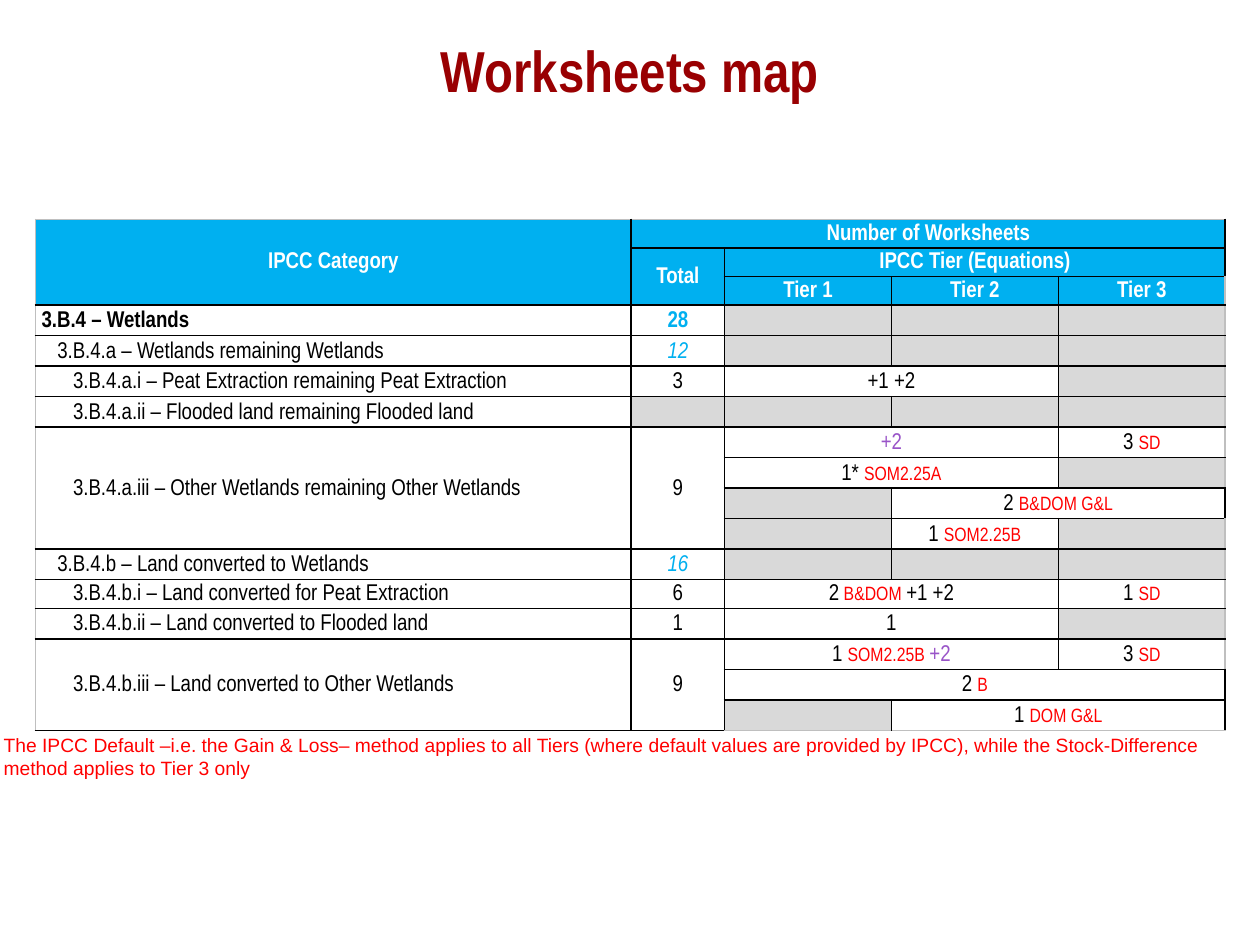
from dataclasses import dataclass

from lxml import etree
from pptx import Presentation
from pptx.dml.color import RGBColor
from pptx.enum.text import MSO_ANCHOR, PP_ALIGN
from pptx.oxml.ns import qn
from pptx.util import Inches, Pt

CENTER, LEFT = PP_ALIGN.CENTER, PP_ALIGN.LEFT
MIDDLE, TOP = MSO_ANCHOR.MIDDLE, MSO_ANCHOR.TOP

SLIDE_W, SLIDE_H = Inches(10), Inches(7.5)
BLUE, GREY, WHITE, BLACK = "00B0F0", "D9D9D9", "FFFFFF", "000000"
RED, PURPLE, MAROON, FRAME = "FF0000", "9954C8", "990002", "BFBFBF"
NARROW = "Arial Narrow"

COLUMN_WIDTHS = (4.73, 0.74, 1.325, 1.325, 1.325)
HEADER_ROWS, ROW_COUNT, COMPACT_ROW = 3, 17, 12
COMPACT_HEIGHT, BODY_HEIGHT = 0.225, 0.24
LINE_SPACING = 1.07
INDENT_START, INDENT_STEP = 0.05, 0.125


@dataclass(frozen=True)
class Piece:
    text: str
    color: str = BLACK
    size: float = 13
    bold: bool = False
    italic: bool = False
    font: str = NARROW


@dataclass(frozen=True)
class Entry:
    row: int
    col: int
    pieces: tuple[Piece, ...]
    rows: int = 1
    cols: int = 1
    level: int = 0


def heading(row: int, col: int, text: str, rows: int = 1, cols: int = 1) -> Entry:
    return Entry(row, col, (Piece(text, WHITE, bold=True),), rows, cols)


def category(row: int, level: int, text: str, rows: int = 1) -> Entry:
    return Entry(row, 0, (Piece(text, bold=level == 0),), rows, level=level)


def total(row: int, text: str, rows: int = 1) -> Entry:
    return Entry(row, 1, (Piece(text),), rows)


def subtotal(row: int, text: str, bold: bool = False) -> Entry:
    return Entry(row, 1, (Piece(text, BLUE, bold=bold, italic=not bold),))


def sheets(row: int, col: int, cols: int, *pieces: Piece) -> Entry:
    return Entry(row, col, pieces, cols=cols)


def method(text: str) -> Piece:
    return Piece(text, RED, 11)


PLUS_TWO = Piece("+2", PURPLE)

ENTRIES = (
    heading(0, 0, "IPCC Category", rows=3),
    heading(0, 1, "Number of Worksheets", cols=4),
    heading(1, 1, "Total", rows=2),
    heading(1, 2, "IPCC Tier (Equations)", cols=3),
    heading(2, 2, "Tier 1"),
    heading(2, 3, "Tier 2"),
    heading(2, 4, "Tier 3"),
    category(3, 0, "3.B.4 – Wetlands"),
    subtotal(3, "28", bold=True),
    category(4, 1, "3.B.4.a – Wetlands remaining Wetlands"),
    subtotal(4, "12"),
    category(5, 2, "3.B.4.a.i – Peat Extraction remaining Peat Extraction"),
    total(5, "3"),
    sheets(5, 2, 2, Piece("+1 +2")),
    category(6, 2, "3.B.4.a.ii – Flooded land remaining Flooded land"),
    category(7, 2, "3.B.4.a.iii – Other Wetlands remaining Other Wetlands", 4),
    total(7, "9", 4),
    sheets(7, 2, 2, PLUS_TWO),
    sheets(7, 4, 1, Piece("3 "), method("SD")),
    sheets(8, 2, 2, Piece("1* "), method("SOM2.25A")),
    sheets(9, 3, 2, Piece("2 "), method("B&DOM G&L")),
    sheets(10, 3, 1, Piece("1 "), method("SOM2.25B")),
    category(11, 1, "3.B.4.b – Land converted to Wetlands"),
    subtotal(11, "16"),
    category(12, 2, "3.B.4.b.i – Land converted for Peat Extraction"),
    total(12, "6"),
    sheets(12, 2, 2, Piece("2"), method(" B&DOM "), Piece("+1 +2")),
    sheets(12, 4, 1, Piece("1 "), method("SD")),
    category(13, 2, "3.B.4.b.ii – Land converted to Flooded land"),
    total(13, "1"),
    sheets(13, 2, 2, Piece("1")),
    category(14, 2, "3.B.4.b.iii – Land converted to Other Wetlands", 3),
    total(14, "9", 3),
    sheets(14, 2, 2, Piece("1 "), method("SOM2.25B "), PLUS_TWO),
    sheets(14, 4, 1, Piece("3 "), method("SD")),
    sheets(15, 2, 3, Piece("2 "), method("B")),
    sheets(16, 3, 2, Piece("1 "), method("DOM G&L")),
)


def rgb(color: str) -> RGBColor:
    return RGBColor.from_string(color)


def write(paragraph, pieces: tuple[Piece, ...], align) -> None:
    paragraph.alignment = align
    for piece in pieces:
        run = paragraph.add_run()
        run.text = piece.text
        run.font.name = piece.font
        run.font.size = Pt(piece.size)
        run.font.bold = piece.bold
        run.font.italic = piece.italic
        run.font.color.rgb = rgb(piece.color)


def add_text(slide, left: float, top: float, width: float, height: float,
             piece: Piece, align, anchor) -> None:
    box = slide.shapes.add_textbox(
        int(SLIDE_W * left), int(SLIDE_H * top), int(SLIDE_W * width), int(SLIDE_H * height))
    box.text_frame.word_wrap = True
    box.text_frame.vertical_anchor = anchor
    write(box.text_frame.paragraphs[0], (piece,), align)


def add_borders(cell, row: int, col: int) -> None:
    outer_sides = {
        "a:lnL": col == 0,
        "a:lnR": col == len(COLUMN_WIDTHS) - 1,
        "a:lnT": row == 0,
        "a:lnB": row == ROW_COUNT - 1,
    }
    properties = cell._tc.get_or_add_tcPr()
    for side, is_outer in outer_sides.items():
        line = etree.SubElement(properties, qn(side), w=str(Pt(1)))
        fill = etree.SubElement(line, qn("a:solidFill"))
        etree.SubElement(fill, qn("a:srgbClr"), val=FRAME if is_outer else BLACK)


def prepare_cell(cell, row: int, col: int) -> None:
    cell.margin_left = cell.margin_right = cell.margin_top = Inches(0.01)
    cell.margin_bottom = 0
    cell.vertical_anchor = MIDDLE
    add_borders(cell, row, col)
    cell.fill.solid()
    cell.fill.fore_color.rgb = rgb(BLUE if row < HEADER_ROWS else GREY)
    etree.SubElement(cell.text_frame.paragraphs[0]._p, qn("a:endParaRPr"), sz="1100")


def fill_entry(table, entry: Entry) -> None:
    cell = table.cell(entry.row, entry.col)
    last_row, last_col = entry.row + entry.rows - 1, entry.col + entry.cols - 1
    if (last_row, last_col) != (entry.row, entry.col):
        cell.merge(table.cell(last_row, last_col))
    paragraph = cell.text_frame.paragraphs[0]
    is_body = entry.row >= HEADER_ROWS
    is_category = is_body and entry.col == 0
    write(paragraph, entry.pieces, LEFT if is_category else CENTER)
    if is_body:
        cell.fill.fore_color.rgb = rgb(WHITE)
        if entry.row != COMPACT_ROW:
            paragraph.line_spacing = LINE_SPACING
    if is_category:
        cell.margin_left = Inches(INDENT_START + INDENT_STEP * entry.level)


def add_worksheet_table(slide) -> None:
    table = slide.shapes.add_table(
        ROW_COUNT, len(COLUMN_WIDTHS), int(SLIDE_W * 0.028), int(SLIDE_H * 0.232),
        Inches(sum(COLUMN_WIDTHS)), int(SLIDE_H * 0.536)).table
    table.first_row = table.horz_banding = False
    for column, width in zip(table.columns, COLUMN_WIDTHS):
        column.width = Inches(width)
    for row, table_row in enumerate(table.rows):
        compact = row < HEADER_ROWS or row == COMPACT_ROW
        table_row.height = Inches(COMPACT_HEIGHT if compact else BODY_HEIGHT)
        for col, cell in enumerate(table_row.cells):
            prepare_cell(cell, row, col)
    for entry in ENTRIES:
        fill_entry(table, entry)


def main() -> None:
    deck = Presentation()
    deck.slide_width, deck.slide_height = SLIDE_W, SLIDE_H
    slide = deck.slides.add_slide(deck.slide_layouts[6])
    add_text(slide, 0, 0.033, 1, 0.081,
             Piece("Worksheets map", MAROON, 33, bold=True), CENTER, MIDDLE)
    add_worksheet_table(slide)
    add_text(slide, -0.007, 0.769, 1, 0.063, Piece(
        "The IPCC Default –i.e. the Gain & Loss– method applies to all Tiers "
        "(where default values are provided by IPCC), while the Stock-Difference "
        "method applies to Tier 3 only", RED, 11, font="Arial"), LEFT, TOP)
    deck.save("out.pptx")


if __name__ == "__main__":
    main()
